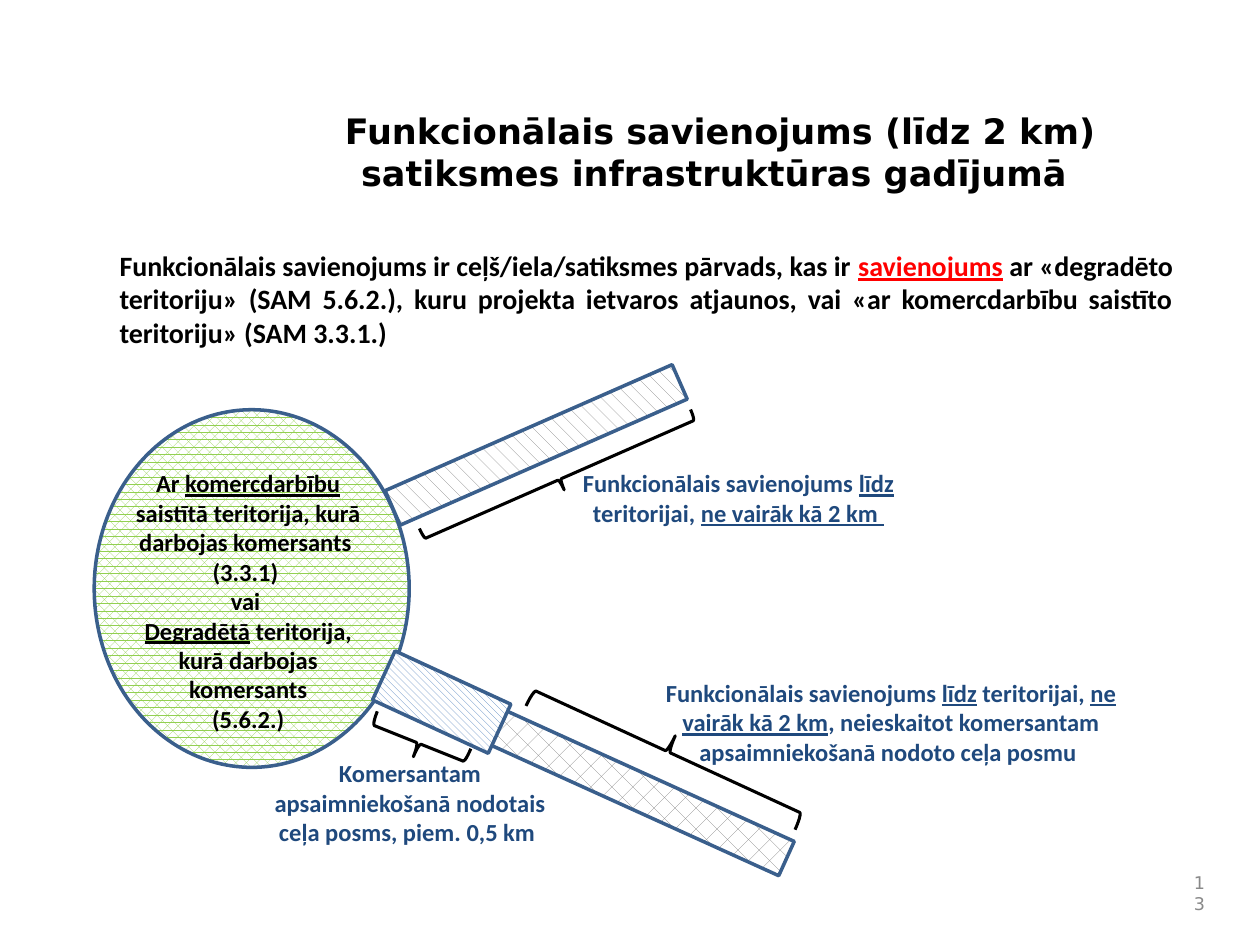
from pptx import Presentation
from pptx.dml.color import RGBColor
from pptx.enum.dml import MSO_PATTERN
from pptx.enum.shapes import MSO_SHAPE
from pptx.enum.text import MSO_ANCHOR, MSO_AUTO_SIZE, PP_ALIGN
from pptx.util import Cm, Pt

COLORS = {"black": "000000", "white": "FFFFFF", "red": "FF0000", "navy": "1F497D",
          "edge": "3A5F8C", "green": "92D050", "gray": "808080", "blue": "4F81BD",
          "pale": "898989"}

# Content: paragraphs are lists of runs, a run is (text, underlined, color)
TITLE = [[("Funkcionālais savienojums (līdz 2 km) satiksmes infrastruktūras gadījumā ",)]]
INTRO = [[("Funkcionālais savienojums ir ceļš/iela/satiksmes pārvads, kas ir ",),
          ("savienojums", True, "red"),
          (" ar «degradēto teritoriju» (SAM 5.6.2.), kuru projekta ietvaros atjaunos, "
           "vai «ar komercdarbību saistīto teritoriju» (SAM 3.3.1.)",)]]
ZONE = [[("Ar ",), ("komercdarbību", True),
         (" saistītā teritorija, kurā darbojas komersants ",)],
        [("(3.3.1) ",)],
        [("vai ",)],
        [("Degradētā", True), (" teritorija, kurā darbojas komersants",)],
        [("(5.6.2.)",)]]
LINK = [("Funkcionālais savienojums ",), ("līdz", True), (" teritorijai, ",)]
UPPER = [LINK + [("ne vairāk kā 2 km ", True)]]
LOWER = [LINK + [("ne vairāk kā 2 km", True),
                 (", neieskaitot komersantam apsaimniekošanā nodoto ceļa posmu ",)]]
LEASED = [[("Komersantam apsaimniekošanā nodotais ceļa posms, piem. 0,5 km ",)]]

# Places in cm: left, top, width, height
TITLE_BOX = (6.05, 2.08, 16.94, 2.24)
INTRO_BOX = (2.16, 4.88, 21.74, 13.28)
PAGE_BOX = (23.7, 17.58, 0.84, 0.84)
ZONE_OVAL = (1.9, 8.26, 6.35, 7.21)

# Roads: box, turn, pattern, pattern color
ROADS = [((7.65, 8.59, 6.32, 0.76), 336.3, MSO_PATTERN.SHINGLE, "gray"),
         ((7.44, 15.11, 8.81, 0.76), 24.4, MSO_PATTERN.DIAGONAL_BRICK, "gray"),
         ((7.62, 13.61, 2.57, 1.09), 24.7, MSO_PATTERN.WIDE_DOWNWARD_DIAGONAL, "blue")]
# Braces: box, turn
BRACES = [((11.05, 6.68, 0.46, 5.97), 66.3),
          ((13.11, 12.17, 0.71, 5.97), 294.7),
          ((8.15, 13.97, 0.58, 2.03), 111.8)]
# Labels: box, text, color
LABELS = [((2.49, 9.32, 5.03, 6.83), ZONE, "black"),
          ((11.28, 9.32, 7.21, 1.45), UPPER, "navy"),
          ((12.93, 13.54, 10.06, 2.06), LOWER, "navy"),
          ((5.13, 15.16, 6.27, 2.06), LEASED, "navy")]


def rgb(name):
    return RGBColor.from_string(COLORS[name])


def write(frame, paras, size, color="black", font="Calibri", bold=True,
          align=PP_ALIGN.CENTER, anchor=MSO_ANCHOR.TOP):
    frame.word_wrap = True
    frame.auto_size = MSO_AUTO_SIZE.NONE
    frame.vertical_anchor = anchor
    for i, runs in enumerate(paras):
        para = frame.paragraphs[0] if i == 0 else frame.add_paragraph()
        para.alignment = align
        for text, *style in runs:
            line, tint = (style + [False, color][len(style):])
            run = para.add_run()
            run.text = text
            run.font.name, run.font.size = font, Pt(size)
            run.font.bold, run.font.underline = bold, line
            run.font.color.rgb = rgb(tint)


def add_text(box, paras, size, **style):
    shape = slide.shapes.add_textbox(*map(Cm, box))
    write(shape.text_frame, paras, size, **style)


def add_form(kind, box, turn=0, edge="edge", width=2, pattern=None, tint=None):
    shape = slide.shapes.add_shape(kind, *map(Cm, box))
    shape.rotation = turn
    shape.shadow.inherit = False
    shape.line.color.rgb = rgb(edge)
    shape.line.width = Pt(width)
    if pattern is None:
        shape.fill.background()
    else:
        shape.fill.patterned()
        shape.fill.pattern = pattern
        shape.fill.fore_color.rgb = rgb(tint)
        shape.fill.back_color.rgb = rgb("white")


deck = Presentation()
deck.slide_width, deck.slide_height = Cm(25.4), Cm(19.05)
slide = deck.slides.add_slide(deck.slide_layouts[5])

# Title, intro and page number
title = slide.shapes.title
title.left, title.top, title.width, title.height = map(Cm, TITLE_BOX)
write(title.text_frame, TITLE, 20, font="DejaVu Sans")
add_text(INTRO_BOX, INTRO, 16, align=PP_ALIGN.JUSTIFY)
add_text(PAGE_BOX, [[("13",)]], 10, color="pale", font="DejaVu Sans", bold=False,
         align=PP_ALIGN.RIGHT, anchor=MSO_ANCHOR.MIDDLE)

# Territory with its roads and braces
add_form(MSO_SHAPE.OVAL, ZONE_OVAL, pattern=MSO_PATTERN.PERCENT_60, tint="green")
for box, turn, pattern, tint in ROADS:
    add_form(MSO_SHAPE.RECTANGLE, box, turn, pattern=pattern, tint=tint)
for box, turn in BRACES:
    add_form(MSO_SHAPE.RIGHT_BRACE, box, turn, edge="black", width=1.75)

# Labels
for box, paras, color in LABELS:
    add_text(box, paras, 14, color=color)

deck.save("out.pptx")
